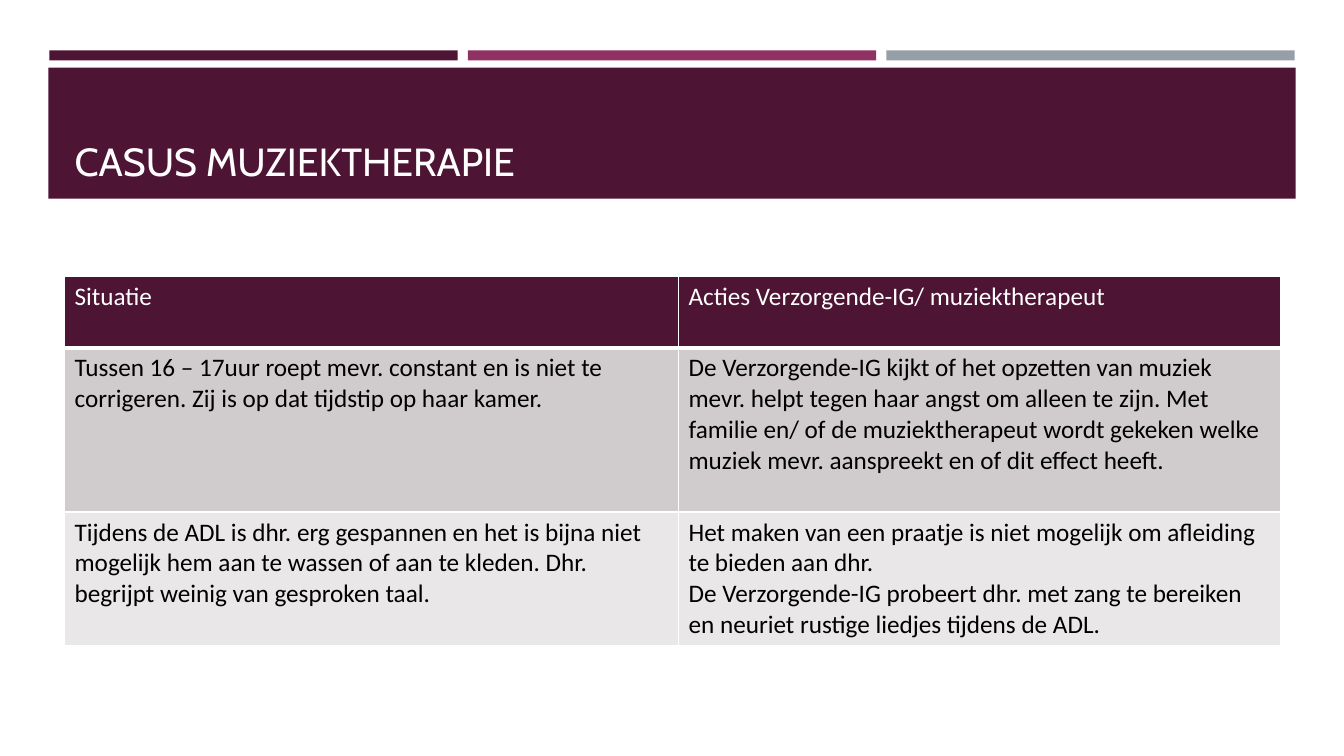
import pptx
import pptx.dml.color
import pptx.enum.shapes
import pptx.enum.text
import pptx.oxml
import pptx.oxml.ns
import pptx.util

PLUM, BERRY, GREY = "4D1434", "903163", "969FA7"
WHITE, BLACK = "FFFFFF", "000000"
ROW_FILLS = [PLUM, "D0CCCE", "E9E7E8"]
CASES = [
    ["Situatie", "Acties Verzorgende-IG/ muziektherapeut"],
    ["Tussen 16 – 17uur roept mevr. constant en is niet te corrigeren. "
     "Zij is op dat tijdstip op haar kamer.",
     "De Verzorgende-IG kijkt of het opzetten van muziek mevr. helpt tegen haar angst "
     "om alleen te zijn. Met familie en/ of de muziektherapeut wordt gekeken welke "
     "muziek mevr. aanspreekt en of dit effect heeft."],
    ["Tijdens de ADL is dhr. erg gespannen en het is bijna niet mogelijk hem aan te "
     "wassen of aan te kleden. Dhr. begrijpt weinig van gesproken taal.",
     "Het maken van een praatje is niet mogelijk om afleiding te bieden aan dhr.\n"
     "De Verzorgende-IG probeert dhr. met zang te bereiken en neuriet rustige liedjes "
     "tijdens de ADL."],
]


def px(length):
    return pptx.util.Emu(length * 9144)


def color(value):
    return pptx.dml.color.RGBColor.from_string(value)


class SlideBuilder:
    title_font = "Cabin"
    body_font = "Calibri"

    def __init__(self, slide):
        self.slide = slide

    def format_text(self, frame, font, size, ink):
        for para in frame.paragraphs:
            para.alignment = pptx.enum.text.PP_ALIGN.LEFT
            for span in para.runs:
                span.font.name = font
                span.font.size = pptx.util.Pt(size)
                span.font.bold = False
                span.font.color.rgb = color(ink)

    def bar(self, left, top, width, height, fill):
        box = self.slide.shapes.add_shape(
            pptx.enum.shapes.MSO_SHAPE.RECTANGLE, px(left), px(top), px(width), px(height))
        box.shadow.inherit = False
        box.fill.solid()
        box.fill.fore_color.rgb = color(fill)
        box.line.fill.background()

    def title(self, text, left, top, width, height):
        box = self.slide.shapes.title
        box.element.getparent().append(box.element)
        box.left, box.top, box.width, box.height = px(left), px(top), px(width), px(height)
        frame = box.text_frame
        frame.text = text
        frame.word_wrap = True
        frame.auto_size = pptx.enum.text.MSO_AUTO_SIZE.NONE
        frame.vertical_anchor = pptx.enum.text.MSO_ANCHOR.BOTTOM
        self.format_text(frame, self.title_font, 28, WHITE)

    def border(self, cell, side, points):
        properties = cell._tc.get_or_add_tcPr()
        properties.append(pptx.oxml.parse_xml(
            f'<a:ln{side} {pptx.oxml.ns.nsdecls("a")} w="{pptx.util.Pt(points)}">'
            f'<a:solidFill><a:srgbClr val="{WHITE}"/></a:solidFill></a:ln{side}>'))

    def table(self, rows, left, top, widths, heights):
        table = self.slide.shapes.add_table(
            len(rows), len(widths), px(left), px(top), px(sum(widths)), px(sum(heights))).table
        for column, width in zip(table.columns, widths):
            column.width = px(width)
        for index, (texts, height) in enumerate(zip(rows, heights)):
            table.rows[index].height = px(height)
            borders = {"L": 1, "R": 1, "T": 3 if index == 1 else 1, "B": 3 if index == 0 else 1}
            for cell, text in zip(table.rows[index].cells, texts):
                for side, points in borders.items():
                    self.border(cell, side, points)
                cell.fill.solid()
                cell.fill.fore_color.rgb = color(ROW_FILLS[index])
                cell.text_frame.text = text
                self.format_text(cell.text_frame, self.body_font, 18, BLACK if index else WHITE)


def main():
    deck = pptx.Presentation()
    deck.slide_width, deck.slide_height = px(1333), px(750)
    page = SlideBuilder(deck.slides.add_slide(deck.slide_layouts[5]))
    for index, fill in enumerate([PLUM, BERRY, GREY]):
        page.bar(49 + 415 * index, 50, 405, 10, fill)
    page.bar(48, 67, 1237, 130, PLUM)
    page.title("CASUS MUZIEKTHERAPIE", 64, 77, 1206, 111)
    page.table(CASES, 64, 274, [609, 597], [71, 163, 131])
    deck.save("out.pptx")


if __name__ == "__main__":
    main()
